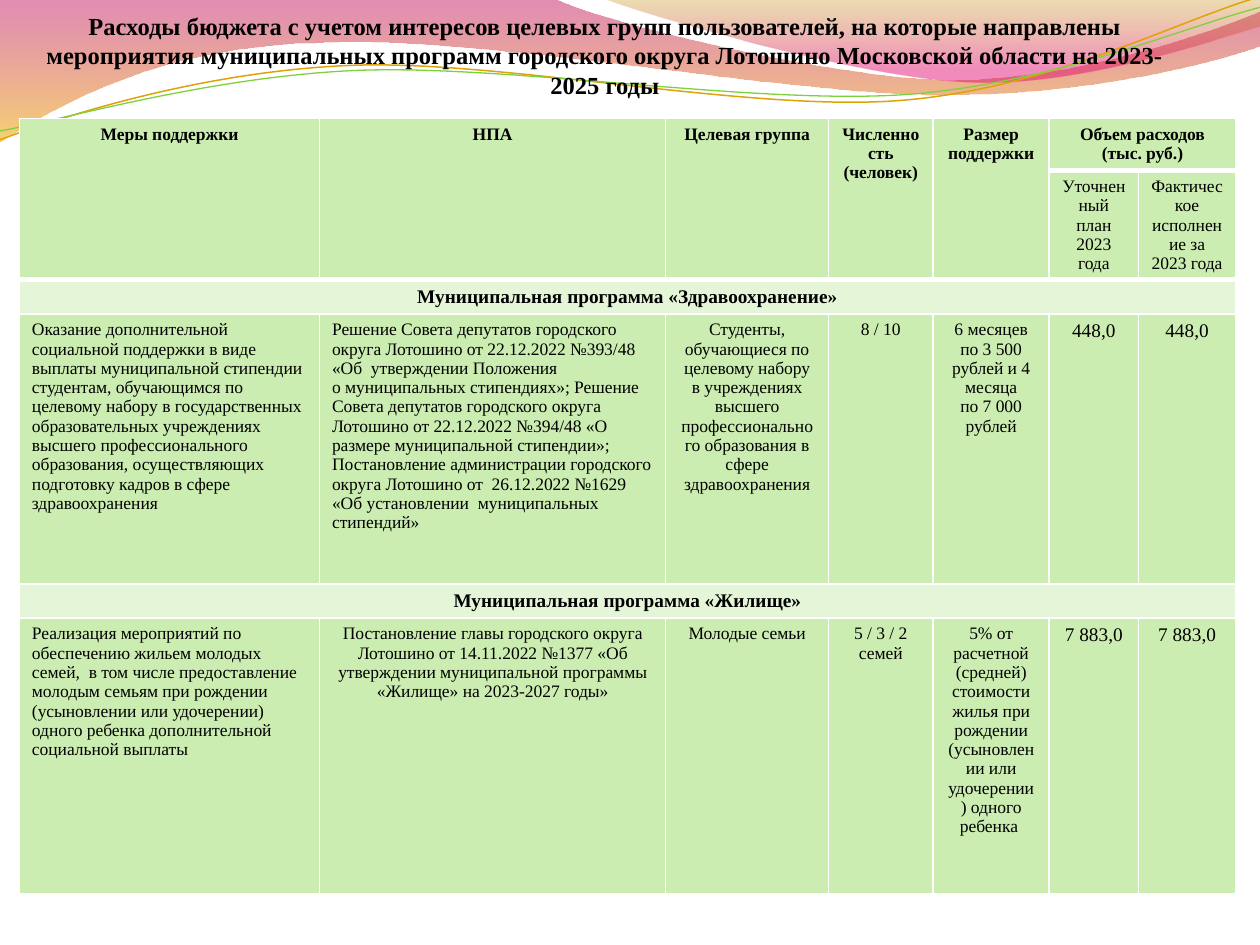
from lxml import etree
from pptx import Presentation
from pptx.dml.color import RGBColor
from pptx.enum.text import MSO_ANCHOR, MSO_AUTO_SIZE, PP_ALIGN
from pptx.oxml.ns import qn
from pptx.util import Cm, Pt

LEFT, CENTER = PP_ALIGN.LEFT, PP_ALIGN.CENTER
BOTTOM = MSO_ANCHOR.BOTTOM
NO_FIT = MSO_AUTO_SIZE.NONE

FONT = "Times New Roman"
BLACK = RGBColor(0, 0, 0)
WHITE = RGBColor(0xFF, 0xFF, 0xFF)
GREEN = RGBColor(0xCC, 0xED, 0xB1)
PALE = RGBColor(0xE5, 0xF6, 0xD8)
PLUM = RGBColor(0xBD, 0x00, 0x59)
AMBER = RGBColor(0xF0, 0xAB, 0x00)
OCHRE = RGBColor(0xC3, 0x8B, 0x00)
PINK = RGBColor(0xE1, 0x00, 0x6B)
GOLD = RGBColor(0xE0, 0xA2, 0x09)
LIME = RGBColor(0x7F, 0xD1, 0x3B)

TITLE = ("Расходы бюджета с учетом интересов целевых групп пользователей, "
         "на которые направлены мероприятия муниципальных программ городского "
         "округа Лотошино Московской области на 2023-2025 годы")

# Waves: a start, then line ends (one point) or curves (three points), in cm
BAND = [[(0, -0.03)], [(11.18, -0.03)],
        [(12.09, 0.43), (16.87, 1.6), (19.25, 1.6)],
        [(21.67, 1.6), (24.33, 0.66), (25.4, 0.23)],
        [(25.43, 0.91)],
        [(24.97, 1.12), (22.1, 1.93), (18.95, 1.91)],
        [(15.8, 1.91), (9.7, 0.71), (6.53, 0.86)],
        [(3.28, 0.89), (1.17, 2.11), (-0.03, 2.87)]]
CREST = [[(12.17, -0.03)],
         [(12.93, 0.28), (17.32, 1.57), (19.53, 1.65)],
         [(21.74, 1.75), (24.41, 0.81), (25.4, 0.53)],
         [(25.4, 0)]]
UPPER = [[(0, 2.82)],
         [(1.22, 2.36), (4.01, 1.45), (7.04, 1.32)],
         [(10.03, 1.19), (15.06, 2.26), (18.11, 2.03)],
         [(21.16, 1.8), (23.83, 0.38), (25.35, -0.05)]]
LOWER = [[(0, 2.64)],
         [(1.19, 2.44), (4.17, 1.55), (7.19, 1.42)],
         [(10.24, 1.3), (15.16, 2.11), (18.21, 1.91)],
         [(21.23, 1.7), (23.9, 0.53), (25.4, 0.15)]]

COLS = [6.05, 6.98, 3.28, 2.11, 2.34, 1.8, 1.96]
ROWS = [1.05, 0.66, 0.69, 5.44, 0.69, 5.56]
HEAD, SUB, BARS = 0, 1, (2, 4)
MERGES = [((0, c), (1, c)) for c in range(5)] + [((0, 5), (0, 6))]
MERGES += [((r, 0), (r, 6)) for r in BARS]
CELLS = [
    ["Меры поддержки", "НПА", "Целевая группа", "Численность (человек)",
     "Размер поддержки", "Объем расходов (тыс. руб.)", ""],
    ["", "", "", "", "", "Уточненный план 2023 года",
     "Фактическое исполнение за 2023 года"],
    ["Муниципальная программа «Здравоохранение»"] + [""] * 6,
    ["Оказание дополнительной социальной поддержки в виде выплаты "
     "муниципальной стипендии студентам, обучающимся по целевому набору в "
     "государственных образовательных учреждениях высшего профессионального "
     "образования, осуществляющих подготовку кадров в сфере здравоохранения",
     "Решение Совета депутатов городского округа Лотошино от 22.12.2022 "
     "№393/48 «Об  утверждении Положения\n"
     "о муниципальных стипендиях»; Решение Совета депутатов городского округа "
     "Лотошино от 22.12.2022 №394/48 «О размере муниципальной стипендии»; "
     "Постановление администрации городского округа Лотошино от  26.12.2022 "
     "№1629 «Об установлении  муниципальных стипендий»",
     "Студенты, обучающиеся по целевому набору в учреждениях высшего "
     "профессионального образования в сфере здравоохранения",
     "8 / 10", "6 месяцев по 3 500 рублей и 4 месяца\nпо 7 000 рублей",
     "448,0", "448,0"],
    ["Муниципальная программа «Жилище»"] + [""] * 6,
    ["Реализация мероприятий по обеспечению жильем молодых семей,  в том числе "
     "предоставление молодым семьям при рождении (усыновлении или "
     "удочерении) одного ребенка дополнительной социальной выплаты",
     "Постановление главы городского округа Лотошино от 14.11.2022 №1377 «Об "
     "утверждении муниципальной программы «Жилище» на 2023-2027 годы»",
     "Молодые семьи", "5 / 3 / 2\nсемей",
     "5% от расчетной (средней) стоимости жилья при рождении (усыновлении "
     "или удочерении) одного ребенка ",
     "7 883,0", "7 883,0"],
]


def bend(shape, wave):
    """Join each three straight steps of a curve into one cubic step."""
    steps = iter(list(shape._element.iter(qn("a:lnTo"))))
    for seg in wave[1:]:
        parts = [next(steps) for _ in seg]
        if len(seg) == 3:
            parts[0].tag = qn("a:cubicBezTo")
            for part in parts[1:]:
                parts[0].append(part[0])
                part.getparent().remove(part)


def add_wave(slide, wave, closed):
    """Draw a wave and hand it to the layout, behind its placeholders."""
    pts = [(Cm(x), Cm(y)) for seg in wave for x, y in seg]
    form = slide.shapes.build_freeform(*pts[0])
    form.add_line_segments(pts[1:], close=closed)
    shape = form.convert_to_shape()
    shape.shadow.inherit = False
    bend(shape, wave)
    tree = slide.slide_layout.shapes._spTree
    count = len(list(tree.iter(qn("a:custGeom"))))
    shape._element.nvSpPr.cNvPr.set("id", str(100 + count))
    tree.insert(2 + count, shape._element)
    return shape


def add_band(slide, wave, stops):
    """Draw a filled wave; stops are (position %, colour, opacity %)."""
    shape = add_wave(slide, wave, True)
    shape.line.fill.background()
    fill = shape.fill
    fill.gradient()
    fill.gradient_angle = 270
    marks = shape._element.spPr.iter(qn("a:gs"))
    for stop, mark, (pos, color, alpha) in zip(fill.gradient_stops, marks, stops):
        stop.color.rgb = color
        mark.set("pos", str(pos * 1000))
        etree.SubElement(mark[0], qn("a:alpha"), val=str(alpha * 1000))


def add_curve(slide, wave, color, width):
    shape = add_wave(slide, wave, False)
    shape.fill.background()
    shape.line.color.rgb = color
    shape.line.width = Pt(width)


def style(frame, size, bold, align):
    for para in frame.paragraphs:
        para.alignment = align
        for run in para.runs:
            font = run.font
            font.name, font.size, font.bold = FONT, Pt(size), bold
            font.color.rgb = BLACK


def set_title(slide):
    title = slide.shapes.title
    title.left, title.top = Cm(0.79), Cm(0)
    title.width, title.height = Cm(22.81), Cm(2)
    frame = title.text_frame
    frame.text = TITLE
    frame.word_wrap = True
    frame.auto_size = NO_FIT
    frame.vertical_anchor = BOTTOM
    frame.margin_left = frame.margin_right = frame.margin_bottom = 0
    style(frame, 14, True, CENTER)


def set_edges(cell, base):
    props = cell._tc.get_or_add_tcPr()
    for side, width in zip("LRTB", (1, 1, 1, base)):
        line = etree.SubElement(props, qn("a:ln" + side), w=str(Pt(width)))
        solid = etree.SubElement(line, qn("a:solidFill"))
        etree.SubElement(solid, qn("a:srgbClr"), val=str(WHITE))


def add_grid(slide):
    holder = slide.shapes.add_table(len(ROWS), len(COLS), Cm(0.39), Cm(2.39),
                                    Cm(sum(COLS)), Cm(sum(ROWS)))
    table = holder.table
    for col, width in zip(table.columns, COLS):
        col.width = Cm(width)
    for row, height in zip(table.rows, ROWS):
        row.height = Cm(height)
    holder.height = Cm(16.33)
    for start, end in MERGES:
        table.cell(*start).merge(table.cell(*end))
    for r, texts in enumerate(CELLS):
        bar = r in BARS
        for c, text in enumerate(texts):
            cell = table.cell(r, c)
            if text:
                cell.text_frame.text = text
            large = bar or (r > SUB and c >= 5)
            left = r > SUB and not bar and (c == 0 or (r, c) == (3, 1))
            style(cell.text_frame, 11 if large else 10, bar or r == HEAD,
                  LEFT if left else CENTER)
            set_edges(cell, 3 if r == HEAD else 1)
            cell.fill.solid()
            cell.fill.fore_color.rgb = PALE if bar else GREEN


def main():
    deck = Presentation()
    deck.slide_width, deck.slide_height = Cm(25.4), Cm(19.05)
    slide = deck.slides.add_slide(deck.slide_layouts[5])
    add_band(slide, BAND, [(0, PLUM, 45), (100, AMBER, 55)])
    add_band(slide, CREST, [(0, OCHRE, 30), (80, PINK, 45)])
    add_curve(slide, UPPER, GOLD, 0.85)
    add_curve(slide, LOWER, LIME, 0.75)
    set_title(slide)
    add_grid(slide)
    deck.save("out.pptx")


if __name__ == "__main__":
    main()
